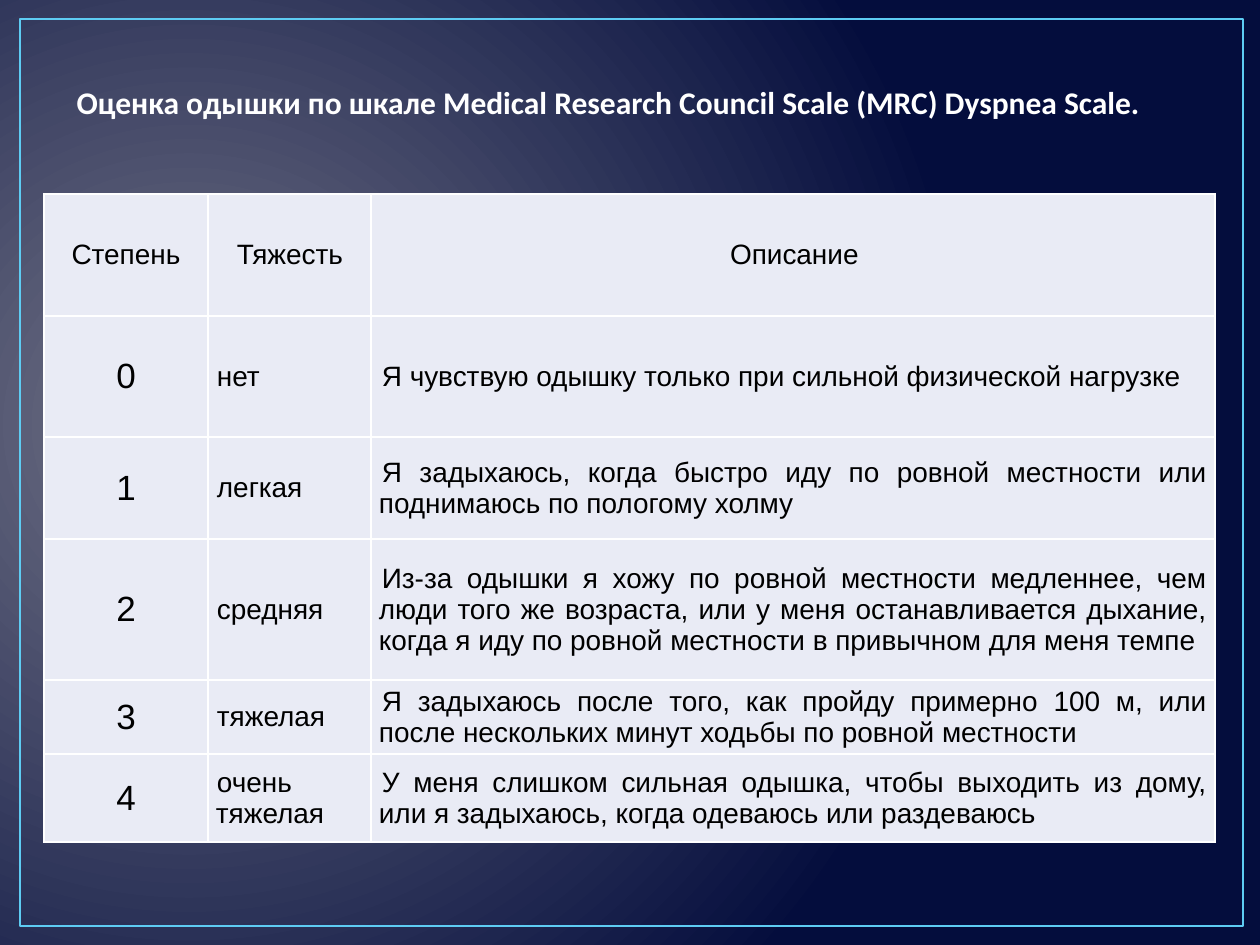
from collections import namedtuple
from dataclasses import dataclass

from lxml import etree
from pptx import Presentation
from pptx import util as u
from pptx.dml.color import RGBColor
from pptx.enum import shapes, text
from pptx.oxml.ns import qn

Box = namedtuple("Box", "left top width height")


@dataclass(frozen=True)
class Theme:
    glow: str = "717386"
    night: str = "040D3D"
    frame: str = "5ECCF3"
    heading: str = "FFFFFF"
    cell: str = "E9EBF5"
    rule: str = "FFFFFF"
    ink: str = "000000"
    heading_font: str = "Calibri"
    table_font: str = "Arial"
    heading_size: int = 18
    body_size: int = 16
    grade_size: int = 20


THEME = Theme()
SLIDE = Box(0, 0, 1260, 945)
FRAME = Box(20, 19, 1223, 907)
HEADING = Box(64, 76, 1150, 51)
TABLE = Box(44, 194, 1171, 648)

COLUMN_WIDTHS = [164, 163, 844]
ROW_HEIGHTS = [122, 121, 102, 141, 74, 88]
FIRST_LINE_INDENTS = [0, 1, 3]
SCALE_ROWS = [
    ("Степень", "Тяжесть", "Описание"),
    ("0", "нет", "Я чувствую одышку только при сильной физической нагрузке"),
    ("1", "легкая", "Я задыхаюсь, когда быстро иду по ровной местности или "
     "поднимаюсь по пологому холму"),
    ("2", "средняя", "Из-за одышки я хожу по ровной местности медленнее, чем "
     "люди того же возраста, или у меня останавливается дыхание, когда я иду "
     "по ровной местности в привычном для меня темпе"),
    ("3", "тяжелая", "Я задыхаюсь после того, как пройду примерно 100 м, или "
     "после нескольких минут ходьбы по ровной местности"),
    ("4", "очень тяжелая", "У меня слишком сильная одышка, чтобы выходить из "
     "дому, или я задыхаюсь, когда одеваюсь или раздеваюсь"),
]


def px(length):
    return u.Emu(round(length * 914400 / 126))


def place(box):
    return [px(length) for length in box]


def rgb(colour):
    return RGBColor.from_string(colour)


def add_run(paragraph, words, font, size, colour, bold=False):
    run = paragraph.add_run()
    run.text = words
    run.font.name = font
    run.font.size = u.Pt(size)
    run.font.bold = bold
    run.font.color.rgb = rgb(colour)


def paint_background(slide):
    """Radial gradient that glows from the left edge."""
    fill = slide.background.fill
    fill.gradient()
    for stop, colour in zip(fill.gradient_stops, (THEME.glow, THEME.night)):
        stop.color.rgb = rgb(colour)
    gradient = slide.element.find(".//" + qn("a:gradFill"))
    gradient.remove(gradient.find(qn("a:lin")))
    circle = etree.SubElement(gradient, qn("a:path"), path="circle")
    etree.SubElement(circle, qn("a:fillToRect"),
                     l="15000", t="50000", r="85000", b="60000")


def add_frame(slide, box):
    frame = slide.shapes.add_shape(shapes.MSO_SHAPE.RECTANGLE, *place(box))
    frame.shadow.inherit = False
    frame.fill.background()
    frame.line.color.rgb = rgb(THEME.frame)
    frame.line.width = u.Pt(1.5)
    slide.shapes.title.element.addprevious(frame.element)


def add_heading(slide, box, words):
    heading = slide.shapes.title
    heading.left, heading.top, heading.width, heading.height = place(box)
    frame = heading.text_frame
    frame.word_wrap = True
    frame.auto_size = text.MSO_AUTO_SIZE.NONE
    frame.vertical_anchor = text.MSO_ANCHOR.MIDDLE
    paragraph = frame.paragraphs[0]
    paragraph.alignment = text.PP_ALIGN.LEFT
    add_run(paragraph, words, THEME.heading_font, THEME.heading_size,
            THEME.heading, bold=True)


def rule_cell(cell):
    """Give all four sides of the cell a thin solid border."""
    properties = cell._tc.get_or_add_tcPr()
    for position, side in enumerate(("lnL", "lnR", "lnT", "lnB")):
        line = etree.Element(qn("a:" + side), w=str(u.Pt(1)))
        solid = etree.SubElement(line, qn("a:solidFill"))
        etree.SubElement(solid, qn("a:srgbClr"), val=THEME.rule)
        properties.insert(position, line)


def fill_cell(cell, words, size, alignment, indent):
    cell.fill.solid()
    cell.fill.fore_color.rgb = rgb(THEME.cell)
    rule_cell(cell)
    cell.vertical_anchor = text.MSO_ANCHOR.MIDDLE
    cell.margin_left = cell.margin_right = px(8)
    cell.margin_top = cell.margin_bottom = 0
    paragraph = cell.text_frame.paragraphs[0]
    paragraph.alignment = alignment
    paragraph._p.get_or_add_pPr().set("indent", str(px(indent)))
    add_run(paragraph, words, THEME.table_font, size, THEME.ink)


def add_scale_table(slide, box):
    table = slide.shapes.add_table(
        len(SCALE_ROWS), len(COLUMN_WIDTHS), *place(box)).table
    for column, width in zip(table.columns, COLUMN_WIDTHS):
        column.width = px(width)
    for row, height in zip(table.rows, ROW_HEIGHTS):
        row.height = px(height)
    for r, entries in enumerate(SCALE_ROWS):
        for c, words in enumerate(entries):
            is_grade = r > 0 and c == 0
            centred = r == 0 or c == 0
            fill_cell(
                table.cell(r, c), words,
                THEME.grade_size if is_grade else THEME.body_size,
                text.PP_ALIGN.CENTER if centred else text.PP_ALIGN.JUSTIFY,
                FIRST_LINE_INDENTS[c])


def main():
    deck = Presentation()
    deck.slide_width, deck.slide_height = px(SLIDE.width), px(SLIDE.height)
    slide = deck.slides.add_slide(deck.slide_layouts.get_by_name("Title Only"))
    paint_background(slide)
    add_frame(slide, FRAME)
    add_heading(slide, HEADING, "Оценка одышки по шкале Medical Research "
                "Council Scale (MRC) Dyspnea Scale.")
    add_scale_table(slide, TABLE)
    deck.save("out.pptx")


if __name__ == "__main__":
    main()
